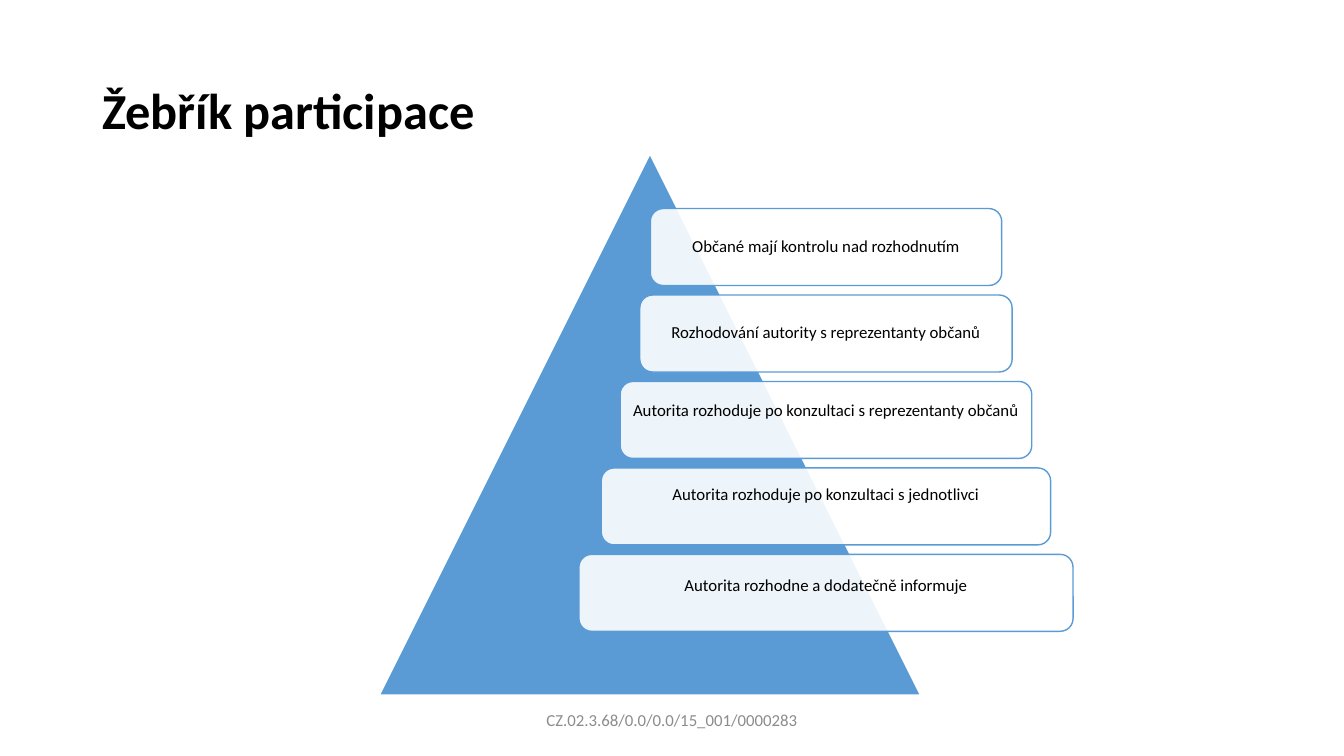
from dataclasses import dataclass

from lxml import etree
from pptx import Presentation
from pptx.enum import shapes, text
from pptx.oxml import ns
from pptx import util as u
from pptx.dml.color import RGBColor

COLOURS = {"blue": "5B9BD5", "white": "FFFFFF", "black": "000000", "grey": "8C8C8C"}
FONT = "Calibri"
RUNG_CENTRE, RUNG_TOP, RUNG_STEP, RUNG_HEIGHT = 590, 149, 61.75, 55
RUNG_INSET = 3.6


@dataclass
class Rung:
    wording: str
    width: float
    lift: float = 0  # extra bottom inset that raises the wording
    spacing: float = 0.9


@dataclass
class Label:
    wording: str
    bounds: tuple[float, float, float, float]
    size: float
    colour: str
    bold: bool = False
    align: text.PP_ALIGN = text.PP_ALIGN.LEFT


RUNGS = [
    Rung("Občané mají kontrolu nad rozhodnutím", 251),
    Rung("Rozhodování autority s reprezentanty občanů", 266),
    Rung("Autorita rozhoduje po konzultaci s reprezentanty občanů", 294, 14, 1),
    Rung("Autorita rozhoduje po konzultaci s jednotlivci", 321, 16),
    Rung("Autorita rozhodne a dodatečně informuje", 353, 12, 1),
]
LABELS = [
    Label("Žebřík participace", (66, 29, 828, 104), 36, "black", bold=True),
    Label("CZ.02.3.68/0.0/0.0/15_001/0000283", (318, 500.5, 324, 29), 12, "grey",
          align=text.PP_ALIGN.CENTER),
]


def colour(name: str) -> RGBColor:
    return RGBColor.from_string(COLOURS[name])


def apply(target, values: dict) -> None:
    for name, value in values.items():
        setattr(target, name, value)


def write(box, wording: str, size: float, tint: str, align: text.PP_ALIGN,
          bold: bool = False, spacing: float = 0.9) -> None:
    apply(box.text_frame, {"word_wrap": True, "vertical_anchor": text.MSO_ANCHOR.MIDDLE})
    para = box.text_frame.paragraphs[0]
    apply(para, {"alignment": align, "line_spacing": spacing})
    span = para.add_run()
    span.text = wording
    apply(span.font, {"name": FONT, "size": u.Pt(size), "bold": bold})
    span.font.color.rgb = colour(tint)


def add_figure(page, kind: shapes.MSO_SHAPE, bounds: tuple, fill: str, line: str):
    box = page.shapes.add_shape(kind, *map(u.Pt, bounds))
    box.shadow.inherit = False
    box.fill.solid()
    box.fill.fore_color.rgb = colour(fill)
    box.line.color.rgb = colour(line)
    box.line.width = u.Pt(1)
    return box


def add_rung(page, index: int, rung: Rung) -> None:
    bounds = (RUNG_CENTRE - rung.width / 2, RUNG_TOP + index * RUNG_STEP,
              rung.width, RUNG_HEIGHT)
    box = add_figure(page, shapes.MSO_SHAPE.ROUNDED_RECTANGLE, bounds, "white", "blue")
    # Let the pyramid show faintly through the rung
    tint = box.fill._xPr.find(".//" + ns.qn("a:srgbClr"))
    etree.SubElement(tint, ns.qn("a:alpha"), val="90000")
    inset = u.Pt(RUNG_INSET)
    apply(box.text_frame, {"margin_left": inset, "margin_right": inset, "margin_top": inset,
                           "margin_bottom": u.Pt(RUNG_INSET + rung.lift)})
    write(box, rung.wording, 12, "black", text.PP_ALIGN.CENTER, spacing=rung.spacing)


def add_label(page, label: Label) -> None:
    box = page.shapes.add_textbox(*map(u.Pt, label.bounds))
    write(box, label.wording, label.size, label.colour, label.align, label.bold)


def main() -> None:
    deck = Presentation()
    apply(deck, {"slide_width": u.Pt(960), "slide_height": u.Pt(540)})
    page = deck.slides.add_slide(deck.slide_layouts[6])

    # Pyramid behind the rungs
    add_figure(page, shapes.MSO_SHAPE.ISOSCELES_TRIANGLE, (271, 110, 386.5, 386.5),
               "blue", "white")

    # Rungs, from full control at the top to mere information
    for index, rung in enumerate(RUNGS):
        add_rung(page, index, rung)

    # Title and footer
    for label in LABELS:
        add_label(page, label)

    deck.save("out.pptx")


if __name__ == "__main__":
    main()
